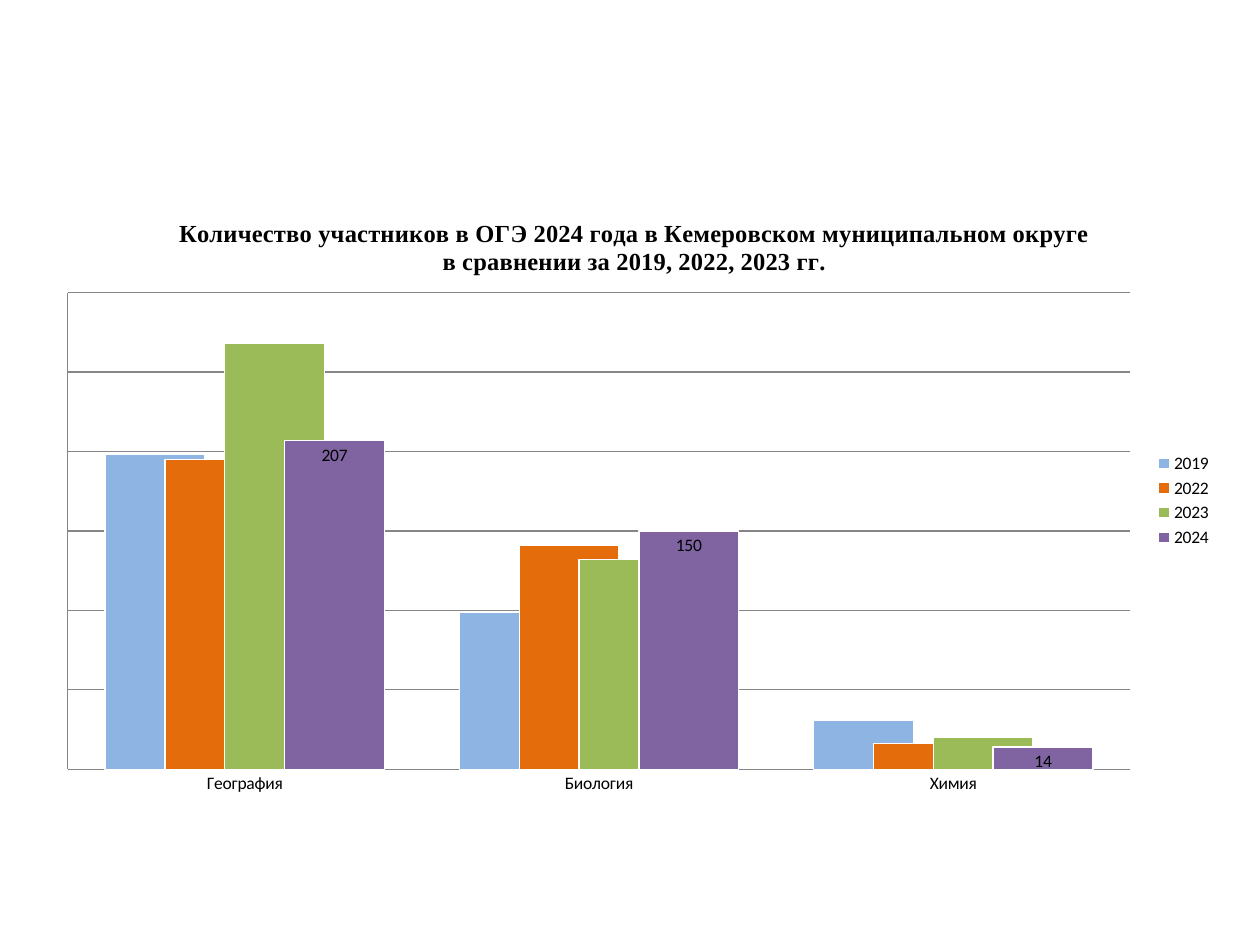
from lxml import etree
from pptx import Presentation
from pptx.chart.data import CategoryChartData
from pptx.dml.color import RGBColor
from pptx.enum.chart import (XL_CHART_TYPE, XL_LABEL_POSITION, XL_LEGEND_POSITION,
                             XL_TICK_LABEL_POSITION, XL_TICK_MARK)
from pptx.oxml.ns import qn
from pptx.util import Pt

COLUMNS = XL_CHART_TYPE.COLUMN_CLUSTERED
INSIDE_END = XL_LABEL_POSITION.INSIDE_END
LEGEND_RIGHT = XL_LEGEND_POSITION.RIGHT
NO_LABELS = XL_TICK_LABEL_POSITION.NONE
NO_TICKS = XL_TICK_MARK.NONE

PX = 914400 // 126
COLORS = {
    "text": "000000", "axis": "868686", "border": "FFFFFF",
    "2019": "8EB4E3", "2022": "E46C0A", "2023": "9BBB59", "2024": "8064A2",
}
PARTICIPANTS = {
    "2019": (198, 99, 31),
    "2022": (195, 141, 16),
    "2023": (268, 132, 20),
    "2024": (207, 150, 14),
}
TITLE_LINES = (
    "Количество участников в ОГЭ 2024 года в Кемеровском муниципальном округе",
    "в сравнении за 2019, 2022, 2023 гг.",
)


def color(name):
    return RGBColor.from_string(COLORS[name])


presentation = Presentation()
presentation.slide_width = 1260 * PX
presentation.slide_height = 945 * PX
slide = presentation.slides.add_slide(presentation.slide_layouts[6])

# Chart
chart_data = CategoryChartData()
chart_data.categories = ["География", "Биология", "Химия"]
for year, values in PARTICIPANTS.items():
    chart_data.add_series(year, values)
chart = slide.shapes.add_chart(
    COLUMNS, 44 * PX, 195 * PX, 1181 * PX, 611 * PX, chart_data).chart
chart.font.name = "Calibri"
chart.font.size = Pt(10)
chart.font.color.rgb = color("text")

# Title
title_frame = chart.chart_title.text_frame
title_frame.text = "\n".join(TITLE_LINES)
for paragraph in title_frame.paragraphs:
    for run in paragraph.runs:
        run.font.name = "Times New Roman"
        run.font.size = Pt(14)
        run.font.bold = True
        run.font.color.rgb = color("text")
chart.chart_title.include_in_layout = False

# Legend
chart.has_legend = True
chart.legend.position = LEGEND_RIGHT
chart.legend.include_in_layout = False

# Axes
category_axis, value_axis = chart.category_axis, chart.value_axis
value_axis.minimum_scale = 0
value_axis.maximum_scale = 300
value_axis.major_unit = 50
value_axis.has_major_gridlines = True
value_axis.tick_label_position = NO_LABELS
for axis in (category_axis, value_axis):
    axis.major_tick_mark = NO_TICKS
    axis.minor_tick_mark = NO_TICKS
for line in (category_axis.format.line, value_axis.format.line,
             value_axis.major_gridlines.format.line):
    line.color.rgb = color("axis")
    line.width = Pt(0.75)

# Columns
plot = chart.plots[0]
plot.gap_width = 75
plot.overlap = 40
plot.vary_by_categories = False
for series in plot.series:
    series.format.fill.solid()
    series.format.fill.fore_color.rgb = color(series.name)
    series.format.line.color.rgb = color("border")
    series.format.line.width = Pt(0.75)

# Value labels on the latest year
labels = plot.series[-1].data_labels
labels.show_value = True
labels.position = INSIDE_END

# Plot area position, as fractions of the chart
plot_area = chart._chartSpace.chart.plotArea
for old_layout in plot_area.findall(qn("c:layout")):
    plot_area.remove(old_layout)
layout = etree.Element(qn("c:layout"))
manual_layout = etree.SubElement(layout, qn("c:manualLayout"))
for tag, value in (("layoutTarget", "inner"), ("xMode", "edge"), ("yMode", "edge"),
                   ("x", "0.02"), ("y", "0.16"), ("w", "0.9"), ("h", "0.78")):
    etree.SubElement(manual_layout, qn(f"c:{tag}")).set("val", value)
plot_area.insert(0, layout)

presentation.save("out.pptx")
